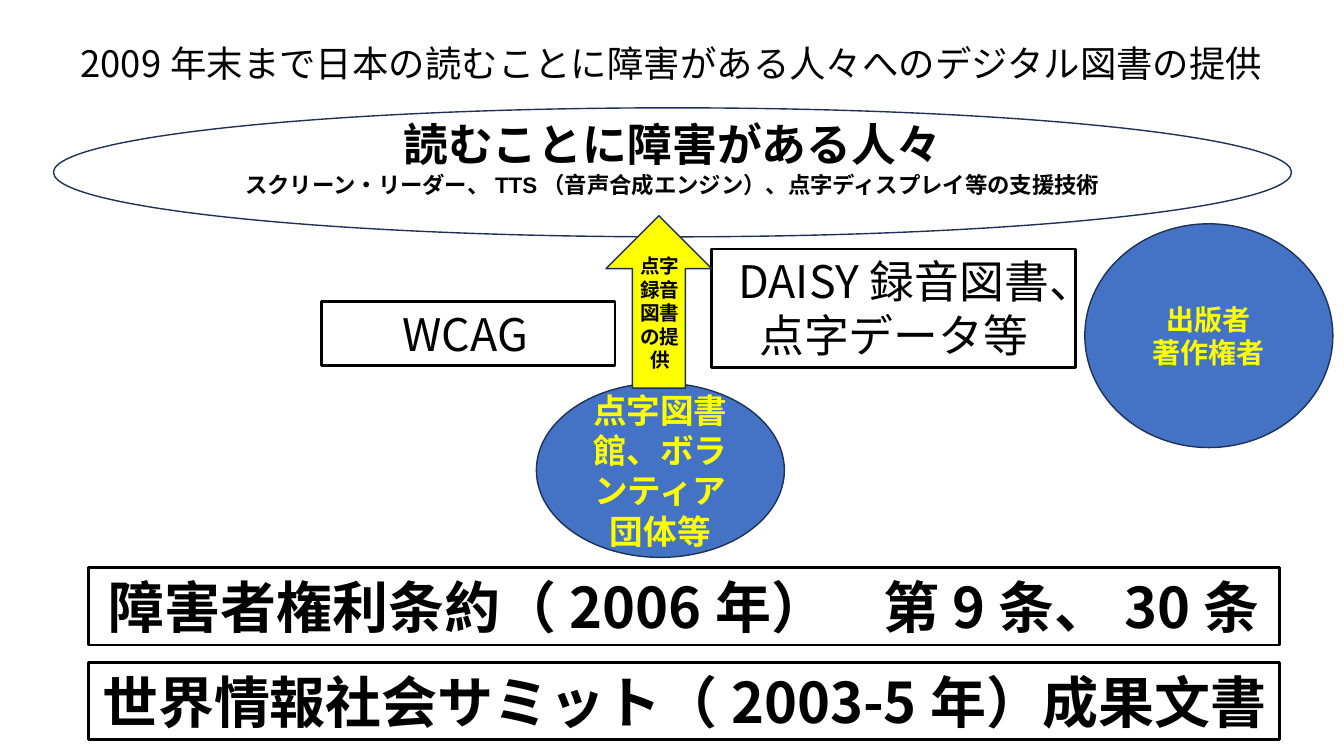
import pptx
import pptx.util
from lxml import etree
from pptx.dml.color import RGBColor
from pptx.enum.shapes import MSO_SHAPE
from pptx.enum.text import MSO_ANCHOR, PP_ALIGN
from pptx.oxml.ns import qn
from pptx.util import Inches, Pt

SANS, LATIN = "Noto Sans CJK JP", "Arial"
BLACK, YELLOW, BLUE, NAVY = "000000", "FFFF00", "4472C4", "1E3256"

# Paragraphs are lists of (text, size) runs.
TITLE = [[("2009年末まで日本の読むことに障害がある人々へのデジタル図書の提供", 26)]]
READERS = [
    [("読むことに障害がある人々", 32)],
    [("スクリーン・リーダー、TTS（音声合成エンジン）、点字ディスプレイ等の支援技術", 16)],
]
SUPPLY = [[("点字録音図書の提供", 14)]]

# (left, top, width, height), paragraphs
PROVIDERS = [
    ((5.32, 3.8, 2.46, 1.73), [[("点字図書館、ボランティア団体等", 24)]]),
    ((10.76, 2.22, 2.46, 2.22), [[("出版者", 20)], [("著作権者", 20)]]),
]
STANDARDS = [
    ((3.19, 2.99, 2.91, 0.64), [[("WCAG", 32), (" ", 18)]]),
    ((7.06, 2.47, 3.61, 1.18), [[("DAISY録音図書、点字データ等", 32)]]),
]
FOUNDATIONS = [
    "障害者権利条約（2006年）　第9条、30条",
    "世界情報社会サミット（2003-5年）成果文書",
]
FOUNDATION_TOP, FOUNDATION_STEP = 5.63, 0.94


def rgb(color):
    return RGBColor.from_string(color)


def write(shape, paragraphs, font, color=BLACK, bold=False, anchor=MSO_ANCHOR.TOP):
    frame = shape.text_frame
    frame.word_wrap = True
    frame.vertical_anchor = anchor
    for index, runs in enumerate(paragraphs):
        paragraph = frame.paragraphs[0] if index == 0 else frame.add_paragraph()
        paragraph.alignment = PP_ALIGN.CENTER
        for text, size in runs:
            run = paragraph.add_run()
            run.text = text
            run.font.name = font
            run.font.size = Pt(size)
            run.font.bold = bold
            run.font.color.rgb = rgb(color)
            # East Asian glyphs take their own typeface.
            east_asian = etree.SubElement(run.font._element, qn("a:ea"))
            east_asian.set("typeface", SANS)


def add_figure(slide, preset, box, fill, line, line_width):
    figure = slide.shapes.add_shape(preset, *map(Inches, box))
    figure.shadow.inherit = False
    if fill:
        figure.fill.solid()
        figure.fill.fore_color.rgb = rgb(fill)
    else:
        figure.fill.background()
    figure.line.color.rgb = rgb(line)
    figure.line.width = Pt(line_width)
    return figure


def add_frame(slide, box, paragraphs, bold=False):
    frame = add_figure(slide, MSO_SHAPE.RECTANGLE, box, None, BLACK, 2)
    write(frame, paragraphs, SANS, bold=bold)


def add_label(slide, box, paragraphs, bold=False):
    label = slide.shapes.add_textbox(*map(Inches, box))
    write(label, paragraphs, SANS, bold=bold)


def main():
    deck = pptx.Presentation()
    deck.slide_width, deck.slide_height = Inches(13.33), Inches(7.5)
    slide = deck.slides.add_slide(deck.slide_layouts[6])

    for box, paragraphs in PROVIDERS:
        provider = add_figure(slide, MSO_SHAPE.OVAL, box, BLUE, NAVY, 1)
        write(provider, paragraphs, LATIN, YELLOW, True, MSO_ANCHOR.MIDDLE)

    for box, paragraphs in STANDARDS:
        add_frame(slide, box, paragraphs)

    readers = add_figure(slide, MSO_SHAPE.OVAL, (0.53, 1.07, 12.28, 1.28), None, NAVY, 1)
    write(readers, READERS, LATIN, bold=True, anchor=MSO_ANCHOR.MIDDLE)
    readers.text_frame.margin_bottom = Inches(0.35)

    for row, text in enumerate(FOUNDATIONS):
        top = FOUNDATION_TOP + row * FOUNDATION_STEP
        add_frame(slide, (0.88, top, 11.81, 0.77), [[(text, 40)]], bold=True)

    supply = add_figure(slide, MSO_SHAPE.RIGHT_ARROW, (5.68, 2.47, 1.71, 1.05), YELLOW, NAVY, 1)
    supply.rotation = 270
    add_label(slide, (6.18, 2.47, 0.73, 1.28), SUPPLY, bold=True)
    add_label(slide, (0.37, 0.36, 12.59, 0.54), TITLE)

    deck.save("out.pptx")


if __name__ == "__main__":
    main()
